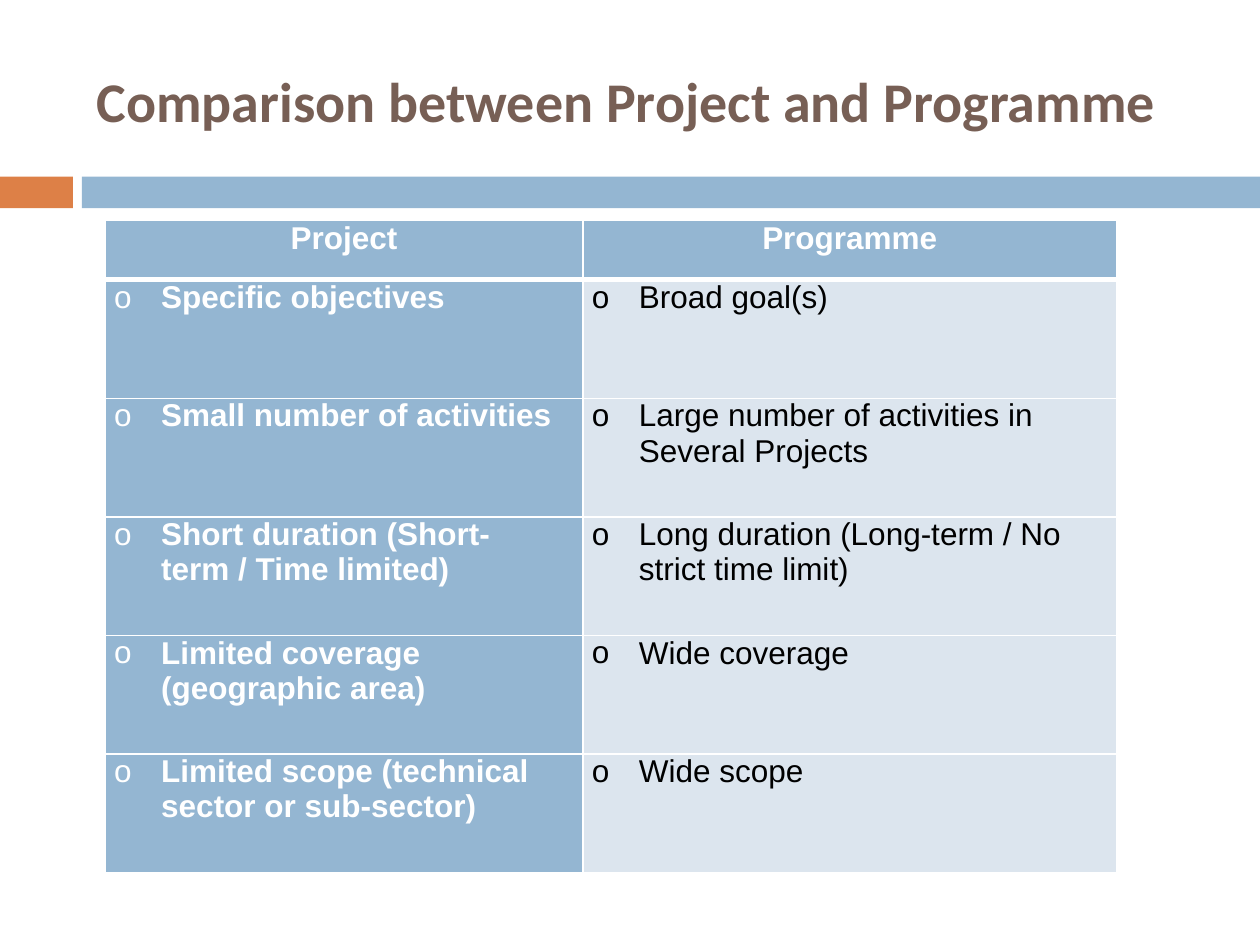
from dataclasses import dataclass

from lxml.etree import SubElement
from pptx import Presentation
from pptx.dml.color import RGBColor
from pptx.enum.shapes import MSO_SHAPE as Shape
from pptx.enum.text import MSO_ANCHOR as Anchor, PP_ALIGN as Align
from pptx.oxml.ns import qn
from pptx.util import Cm, Pt

WHITE, BLACK = "FFFFFF", "000000"
BLUE, PALE, ORANGE, BROWN = "94B6D2", "DCE5EE", "DD8047", "775F55"


@dataclass
class Band:
    left: float
    width: float
    fill: str


@dataclass
class Look:
    fill: str
    ink: str
    bold: bool
    bullet: bool
    base: float  # bottom border in points


HEAD = Look(BLUE, WHITE, True, False, 3)
LEFT = Look(BLUE, WHITE, True, True, 1)
RIGHT = Look(PALE, BLACK, False, True, 1)

BANDS = [Band(0, 1.47, ORANGE), Band(1.65, 23.75, BLUE)]
COLS = [9.63, 10.76]
HEAD_H, ROW_H = 1.19, 2.39
ROWS = [
    ("Project", "Programme"),
    ("Specific objectives", "Broad goal(s)"),
    ("Small number of activities",
     "Large number of activities in Several Projects"),
    ("Short duration (Short-term / Time limited)",
     "Long duration (Long-term / No strict time limit)"),
    ("Limited coverage (geographic area)", "Wide coverage"),
    ("Limited scope (technical sector or sub-sector)", "Wide scope"),
]


def color(code: str) -> RGBColor:
    return RGBColor.from_string(code)


def style(para, face: str, size: float, ink: str, bold: bool) -> None:
    font = para.font
    font.name, font.size, font.bold = face, Pt(size), bold
    font.color.rgb = color(ink)


def draw_band(slide, band: Band) -> None:
    bar = slide.shapes.add_shape(
        Shape.RECTANGLE, Cm(band.left), Cm(3.56), Cm(band.width), Cm(0.64))
    bar.shadow.inherit = False
    bar.fill.solid()
    bar.fill.fore_color.rgb = color(band.fill)
    bar.line.fill.background()


def draw_title(slide, text: str) -> None:
    box = slide.shapes.add_textbox(Cm(1.7), Cm(0.64), Cm(22.66), Cm(2.74))
    frame = box.text_frame
    frame.word_wrap = True
    frame.vertical_anchor = Anchor.MIDDLE
    para = frame.paragraphs[0]
    para.text = text
    style(para, "Calibri", 32, BROWN, True)


def add_bullet(para) -> None:
    """Give the paragraph a hanging "o" bullet and its tab stop."""
    props = para._p.get_or_add_pPr()
    props.set("marL", str(Cm(0.95)))
    props.set("indent", str(Cm(-0.95)))
    SubElement(props, qn("a:buFont"), typeface="Arial")
    SubElement(props, qn("a:buChar"), char="o")
    tabs = SubElement(props, qn("a:tabLst"))
    SubElement(tabs, qn("a:tab"), pos=str(Cm(0.64)), algn="l")


def add_edge(cell, side: str, width: float) -> None:
    props = cell._tc.get_or_add_tcPr()
    line = SubElement(props, qn(f"a:ln{side}"), w=str(Pt(width)))
    fill = SubElement(line, qn("a:solidFill"))
    SubElement(fill, qn("a:srgbClr"), val=WHITE)


def fill_cell(cell, text: str, look: Look, top: float) -> None:
    for side, width in zip("LRTB", (1, 1, top, look.base)):
        add_edge(cell, side, width)
    cell.fill.solid()
    cell.fill.fore_color.rgb = color(look.fill)
    cell.margin_left = cell.margin_right = Cm(0.18)
    cell.margin_top = cell.margin_bottom = 0
    para = cell.text_frame.paragraphs[0]
    para.text = text
    if look.bullet:
        add_bullet(para)
    else:
        para.alignment = Align.CENTER
    style(para, "Arial", 18, look.ink, look.bold)


def draw_table(slide) -> None:
    height = HEAD_H + ROW_H * (len(ROWS) - 1)
    table = slide.shapes.add_table(
        len(ROWS), len(COLS), Cm(2.12), Cm(4.45),
        Cm(sum(COLS)), Cm(height)).table
    for col, width in zip(table.columns, COLS):
        col.width = Cm(width)
    for i, texts in enumerate(ROWS):
        table.rows[i].height = Cm(ROW_H if i else HEAD_H)
        looks = (LEFT, RIGHT) if i else (HEAD, HEAD)
        top = HEAD.base if i == 1 else 1
        for j, (text, look) in enumerate(zip(texts, looks)):
            fill_cell(table.cell(i, j), text, look, top)


def main() -> None:
    deck = Presentation()
    deck.slide_width, deck.slide_height = Cm(25.4), Cm(19.05)
    slide = deck.slides.add_slide(deck.slide_layouts[6])
    for band in BANDS:
        draw_band(slide, band)
    draw_title(slide, "Comparison between Project and Programme")
    draw_table(slide)
    deck.save("out.pptx")


if __name__ == "__main__":
    main()
